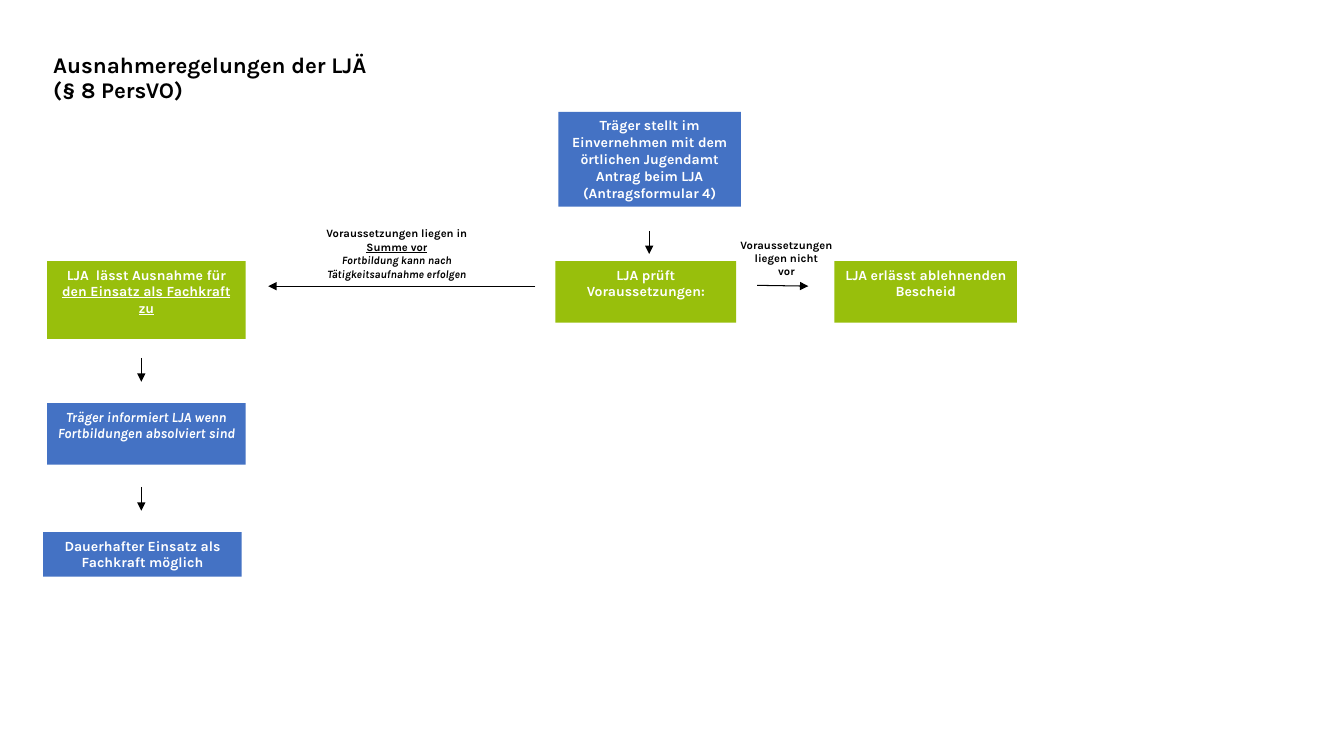
from lxml import etree
from pptx import Presentation
from pptx import util as u
from pptx.dml.color import RGBColor
from pptx.enum import shapes, text
from pptx.oxml import ns

COLORS = {"blue": "4472C4", "green": "98BF0C", "black": "000000", "white": "FFFFFF"}
FONT = {"name": "Karla", "bold": True}
UNDERLINED = {"underline": True}
ITALIC = {"italic": True}


def color(name):
    return RGBColor.from_string(COLORS[name])


def set_attributes(target, values):
    for name, value in values.items():
        setattr(target, name, value)


def write_text(shape, paragraphs, size, font_color, alignment=text.PP_ALIGN.CENTER):
    """Fill a shape with paragraphs, each a list of (wording, font values) runs."""
    frame = shape.text_frame
    set_attributes(frame, {"word_wrap": True, "vertical_anchor": text.MSO_ANCHOR.TOP})
    for index, runs in enumerate(paragraphs):
        paragraph = frame.add_paragraph() if index else frame.paragraphs[0]
        paragraph.alignment = alignment
        for wording, extra in runs:
            run = paragraph.add_run()
            run.text = wording
            set_attributes(run.font, {**FONT, "size": u.Pt(size), **extra})
            run.font.color.rgb = color(font_color)


def place(origin, left, top):
    return u.Cm(origin[0] + left), u.Cm(origin[1] + top)


def add_step(slide, origin, box, fill, paragraphs):
    left, top, width, height = box
    shape = slide.shapes.add_shape(shapes.MSO_SHAPE.RECTANGLE, *place(origin, left, top),
                                   u.Cm(width), u.Cm(height))
    shape.shadow.inherit = False
    shape.fill.solid()
    shape.fill.fore_color.rgb = color(fill)
    shape.line.fill.background()
    write_text(shape, paragraphs, 10, "white")


def add_label(slide, origin, box, paragraphs):
    left, top, width, height = box
    label = slide.shapes.add_textbox(*place(origin, left, top), u.Cm(width), u.Cm(height))
    write_text(label, paragraphs, 8, "black")


def add_arrow(slide, origin, start, end):
    arrow = slide.shapes.add_connector(shapes.MSO_CONNECTOR.STRAIGHT,
                                       *place(origin, *start), *place(origin, *end))
    arrow.line.width = u.Pt(0.75)
    arrow.line.color.rgb = color("black")
    head = etree.SubElement(arrow.line._get_or_add_ln(), ns.qn("a:tailEnd"))
    head.set("type", "triangle")
    etree.SubElement(arrow._element.spPr, ns.qn("a:effectLst"))


def add_title(slide, box):
    title = slide.shapes.title
    set_attributes(title, dict(zip(("left", "top", "width", "height"), map(u.Cm, box))))
    write_text(title, [[("Ausnahmeregelungen der LJÄ (§ 8 PersVO)", {})]], 16, "black",
               text.PP_ALIGN.LEFT)
    set_attributes(title.text_frame, {
        "vertical_anchor": text.MSO_ANCHOR.MIDDLE, "auto_size": text.MSO_AUTO_SIZE.NONE,
        "margin_left": u.Cm(0.25), "margin_right": u.Cm(0.25),
        "margin_top": u.Cm(0.13), "margin_bottom": u.Cm(0.74)})
    title.text_frame.paragraphs[0].line_spacing = 0.9


def add_application_and_check(slide, origin):
    add_step(slide, origin, (0.07, 0, 4.6, 2.39), "blue", [
        [("Träger stellt im Einvernehmen mit dem örtlichen Jugendamt Antrag beim LJA", {})],
        [("(Antragsformular 4)", {})]])
    add_arrow(slide, origin, (2.36, 3), (2.36, 3.58))
    add_step(slide, origin, (0, 3.76, 4.55, 1.55), "green",
             [[("LJA prüft Voraussetzungen:", {})]])


def add_rejection(slide, origin):
    add_label(slide, origin, (0, 0, 3.68, 1.27),
              [[("Voraussetzungen liegen nicht", {})], [("vor", {})]])
    add_arrow(slide, origin, (1.1, 1.32), (2.39, 1.34))
    add_step(slide, origin, (3.05, 0.71, 4.6, 1.55), "green",
             [[("LJA erlässt ablehnenden Bescheid", {})]])


def add_approval_condition(slide, origin):
    add_label(slide, origin, (0.4, 0, 5.69, 1.63), [
        [("Voraussetzungen liegen in", {})],
        [("Summe vor", UNDERLINED)],
        [("Fortbildung kann nach Tätigkeitsaufnahme erfolgen", ITALIC)]])
    add_arrow(slide, origin, (6.73, 1.62), (0, 1.62))


def add_approval_steps(slide, origin):
    width = 5
    add_step(slide, origin, (0.1, 0, width, 1.96), "green", [
        [("LJA  lässt Ausnahme für ", {}), ("den Einsatz als Fachkraft zu", UNDERLINED)]])
    add_step(slide, origin, (0.1, 3.58, width, 1.55), "blue",
             [[("Träger informiert LJA wenn Fortbildungen absolviert sind", ITALIC)]])
    add_step(slide, origin, (0, 6.83, width, 1.12), "blue",
             [[("Dauerhafter Einsatz als Fachkraft möglich", {})]])
    for top in (2.44, 5.69):
        add_arrow(slide, origin, (2.47, top), (2.47, top + 0.6))


def main():
    presentation = Presentation()
    presentation.slide_width = u.Cm(33.87)
    presentation.slide_height = u.Cm(19.05)
    slide = presentation.slides.add_slide(presentation.slide_layouts[5])
    add_title(slide, (1.09, 0.74, 8.84, 3.1))
    add_application_and_check(slide, (14, 2.82))
    add_rejection(slide, (17.98, 5.87))
    add_approval_condition(slide, (6.76, 5.59))
    add_approval_steps(slide, (1.09, 6.58))
    presentation.save("out.pptx")


if __name__ == "__main__":
    main()
